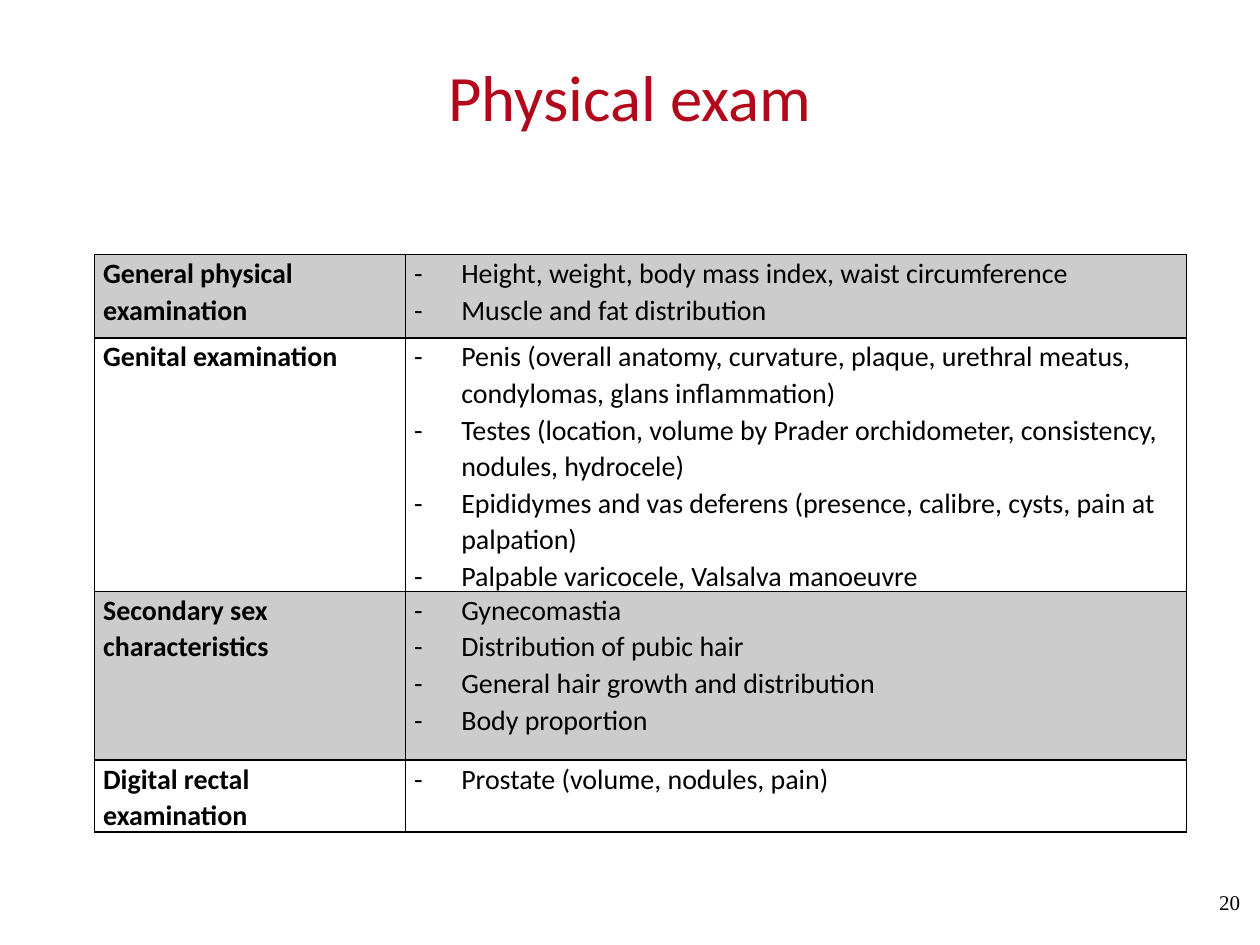
from lxml.etree import SubElement
from pptx import Presentation
from pptx.dml.color import RGBColor
from pptx.enum.text import MSO_ANCHOR, PP_ALIGN
from pptx.oxml.ns import qn
from pptx.util import Cm, Pt

COLORS = {"title": "B3071B", "text": "000000", "border": "000000", "band": "CCCCCC"}

EXAMS = [
    ("General physical examination", 1.68, [
        "Height, weight, body mass index, waist circumference",
        "Muscle and fat distribution",
    ]),
    ("Genital examination", 5.11, [
        "Penis (overall anatomy, curvature, plaque, urethral meatus, "
        "condylomas, glans inflammation)",
        "Testes (location, volume by Prader orchidometer, consistency, "
        "nodules, hydrocele)",
        "Epididymes and vas deferens (presence, calibre, cysts, pain at palpation)",
        "Palpable varicocele, Valsalva manoeuvre",
    ]),
    ("Secondary sex characteristics", 3.4, [
        "Gynecomastia",
        "Distribution of pubic hair",
        "General hair growth and distribution",
        "Body proportion",
    ]),
    ("Digital rectal examination", 0.81, ["Prostate (volume, nodules, pain)"]),
]
COLUMN_WIDTHS = [6.27, 15.75]


def format_runs(paragraph, size, color, font="Calibri", bold=False):
    for run in paragraph.runs:
        run.font.size = Pt(size)
        run.font.name = font
        run.font.bold = bold
        run.font.color.rgb = RGBColor.from_string(COLORS[color])


def add_borders(cell):
    properties = cell._tc.get_or_add_tcPr()
    for side in ("a:lnL", "a:lnR", "a:lnT", "a:lnB"):
        line = SubElement(properties, qn(side), w=str(Pt(1)))
        fill = SubElement(line, qn("a:solidFill"))
        SubElement(fill, qn("a:srgbClr"), val=COLORS["border"])


prs = Presentation()
prs.slide_width, prs.slide_height = Cm(25.4), Cm(19.05)
slide = prs.slides.add_slide(prs.slide_layouts[6])

# Title and slide number
for text, place, align, size, color, font in [
    ("Physical exam", (1.27, 0.33, 22.86, 3.18), PP_ALIGN.CENTER, 37, "title", "Calibri"),
    ("20", (19.28, 17.83, 5.92, 0.84), PP_ALIGN.RIGHT, 12, "text", "Times New Roman"),
]:
    frame = slide.shapes.add_textbox(*map(Cm, place)).text_frame
    frame.word_wrap = True
    frame.margin_left = frame.margin_right = Cm(0.2)
    frame.margin_top = frame.margin_bottom = Cm(0.1)
    frame.vertical_anchor = MSO_ANCHOR.MIDDLE if color == "title" else MSO_ANCHOR.TOP
    frame.text = text
    frame.paragraphs[0].alignment = align
    format_runs(frame.paragraphs[0], size, color, font)

# Examination table
exam_table = slide.shapes.add_table(
    len(EXAMS), 2, Cm(1.9), Cm(5.13), Cm(sum(COLUMN_WIDTHS)),
    Cm(sum(height for _, height, _ in EXAMS))).table
exam_table.first_row = exam_table.horz_banding = False
for column, width in zip(exam_table.columns, COLUMN_WIDTHS):
    column.width = Cm(width)

for row, (exam, height, findings) in enumerate(EXAMS):
    exam_table.rows[row].height = Cm(height)
    for col, content in enumerate([exam, "\n".join(findings)]):
        cell = exam_table.cell(row, col)
        cell.margin_left = cell.margin_right = Cm(0.18)
        cell.margin_top = cell.margin_bottom = 0
        add_borders(cell)
        if row % 2 == 0:
            cell.fill.solid()
            cell.fill.fore_color.rgb = RGBColor.from_string(COLORS["band"])
        else:
            cell.fill.background()
        cell.text_frame.text = content
        for paragraph in cell.text_frame.paragraphs:
            paragraph.line_spacing = 1.07
            if col == 1:
                bullet = paragraph._p.get_or_add_pPr()
                bullet.set("marL", str(Cm(0.95)))
                bullet.set("indent", str(-Cm(0.95)))
                SubElement(bullet, qn("a:buFont"), typeface="Calibri")
                SubElement(bullet, qn("a:buChar"), char="-")
            format_runs(paragraph, 16, "text", bold=col == 0)

prs.save("out.pptx")
